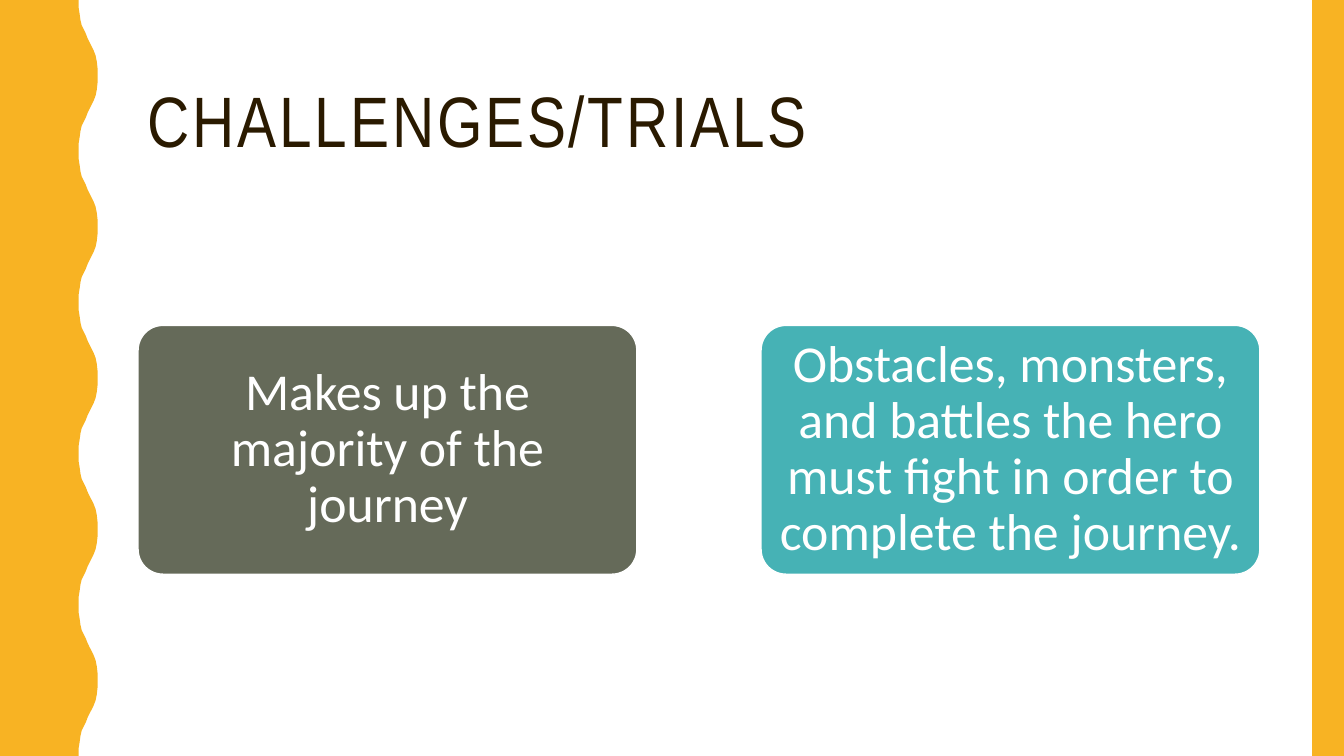
from pptx import Presentation
from pptx.dml.color import RGBColor
from pptx.enum.shapes import MSO_SHAPE
from pptx.enum.text import MSO_ANCHOR, PP_ALIGN
from pptx.util import Cm, Pt

GOLD = RGBColor(0xF8, 0xB3, 0x23)
BROWN = RGBColor(0x2A, 0x1A, 0x00)
OLIVE = RGBColor(0x65, 0x6A, 0x59)
TEAL = RGBColor(0x46, 0xB2, 0xB5)
WHITE = RGBColor(0xFF, 0xFF, 0xFF)

WIDTH, HEIGHT = 33.87, 19.05
LEFT, SPAN = 3.48, 28.27
CARD_WIDTH, CARD_HEIGHT, CARD_TOP = 12.57, 6.27, 8.2
CREST = HEIGHT / 10
CURVE = [
    (1.98, 0), (1.98, 0.18), (2.01, 0.36), (2.03, 0.51), (2.06, 0.64),
    (2.11, 0.74), (2.16, 0.84), (2.21, 0.97), (2.26, 1.07), (2.31, 1.17),
    (2.36, 1.27), (2.41, 1.4), (2.44, 1.55), (2.46, 1.73), (2.46, CREST),
]
CARDS = [
    ("Makes up the majority of the journey", OLIVE),
    ("Obstacles, monsters, and battles the hero must fight in order to "
     "complete the journey.", TEAL),
]


class Deck:
    title = {"name": "Arial Narrow", "size": Pt(51)}
    body = {"name": "Calibri", "size": Pt(37)}
    inset = {"margin_left": Cm(0.2), "margin_right": Cm(0.2),
             "margin_top": Cm(0.13), "margin_bottom": Cm(0.13)}

    def __init__(self):
        self.show = Presentation()
        self.show.slide_width = Cm(WIDTH)
        self.show.slide_height = Cm(HEIGHT)
        self.slide = self.show.slides.add_slide(self.show.slide_layouts[6])
        self.shapes = self.slide.shapes

    def apply(self, item, style):
        for name, value in style.items():
            setattr(item, name, value)

    def paint(self, shape, fill, line=None):
        shape.shadow.inherit = False
        shape.fill.solid()
        shape.fill.fore_color.rgb = fill
        if line is None:
            shape.line.fill.background()
        else:
            shape.line.color.rgb = line
            shape.line.width = Pt(1)

    def label(self, shape, text, font, color, align):
        frame = shape.text_frame
        self.apply(frame, {"word_wrap": True,
                           "vertical_anchor": MSO_ANCHOR.MIDDLE})
        line = frame.paragraphs[0]
        self.apply(line, {"alignment": align, "line_spacing": 0.9})
        run = line.add_run()
        run.text = text
        self.apply(run.font, font)
        run.font.color.rgb = color
        return run

    def head(self, text, box):
        shape = self.shapes.add_textbox(*map(Cm, box))
        run = self.label(shape, text, self.title, BROWN, PP_ALIGN.LEFT)
        run._r.get_or_add_rPr().set("spc", "200")

    def band(self, box, fill):
        shape = self.shapes.add_shape(MSO_SHAPE.RECTANGLE, *map(Cm, box))
        self.paint(shape, fill)

    def card(self, text, box, fill):
        shape = self.shapes.add_shape(MSO_SHAPE.ROUNDED_RECTANGLE,
                                      *map(Cm, box))
        shape.adjustments[0] = 0.1
        self.paint(shape, fill, WHITE)
        self.apply(shape.text_frame, self.inset)
        self.label(shape, text, self.body, WHITE, PP_ALIGN.CENTER)

    def wave(self, fill):
        period = CURVE + [(x, 2 * CREST - y) for x, y in CURVE[-2::-1]]
        edge = [(Cm(x), Cm(y + 2 * CREST * turn))
                for turn in range(5) for x, y in period]
        form = self.shapes.build_freeform(0, 0)
        form.add_line_segments(edge + [(0, Cm(HEIGHT))], close=True)
        self.paint(form.convert_to_shape(), fill)


def main():
    deck = Deck()
    deck.head("CHALLENGES/TRIALS", (LEFT, 1.07, SPAN, 4.14))
    deck.wave(GOLD)
    deck.band((33.07, 0, 0.8, HEIGHT), GOLD)
    step = SPAN - CARD_WIDTH
    for index, (text, fill) in enumerate(CARDS):
        box = (LEFT + index * step, CARD_TOP, CARD_WIDTH, CARD_HEIGHT)
        deck.card(text, box, fill)
    deck.show.save("out.pptx")


if __name__ == "__main__":
    main()
